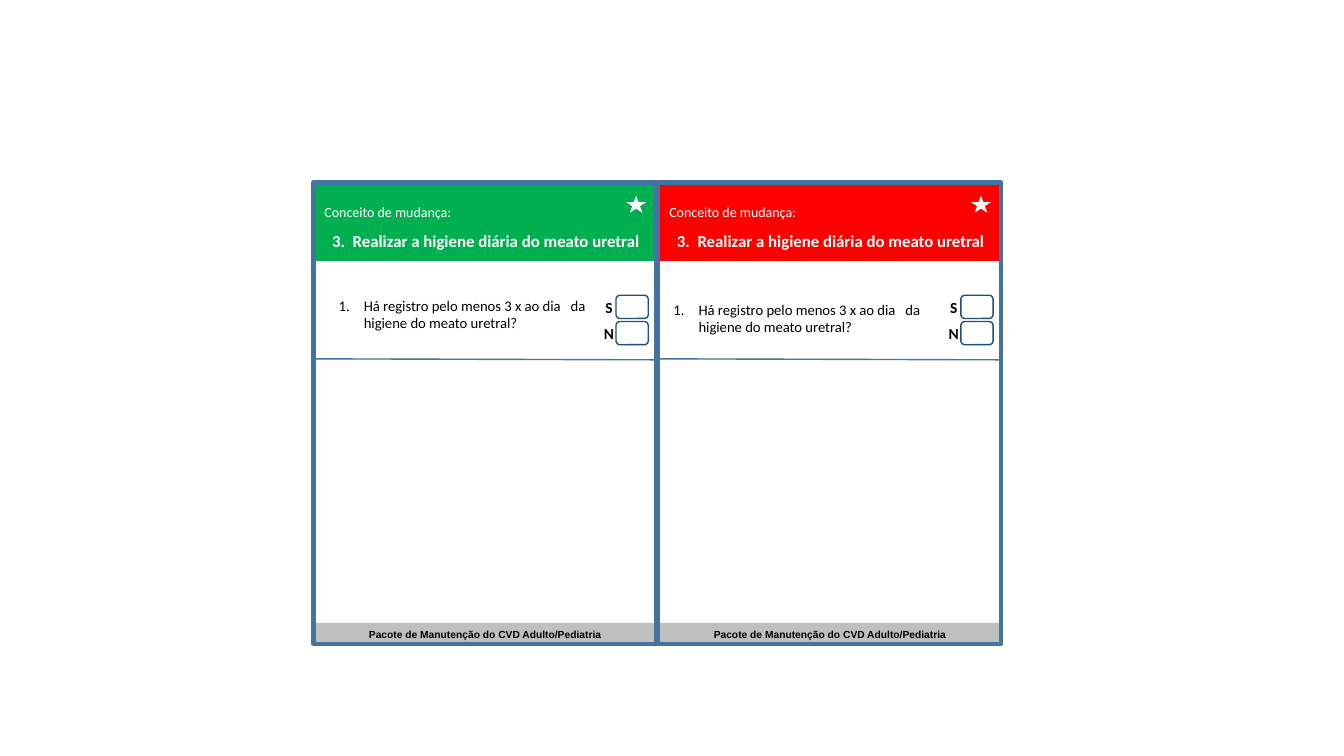
from dataclasses import dataclass

from lxml import etree
from pptx import Presentation
from pptx.dml.color import RGBColor
from pptx.enum.shapes import MSO_CONNECTOR, MSO_SHAPE
from pptx.enum.text import MSO_ANCHOR, PP_ALIGN
from pptx.oxml.ns import qn
from pptx.util import Emu, Pt

RECT, ROUNDED, STAR = MSO_SHAPE.RECTANGLE, MSO_SHAPE.ROUNDED_RECTANGLE, MSO_SHAPE.STAR_5_POINT
STRAIGHT = MSO_CONNECTOR.STRAIGHT
LEFT, CENTER = PP_ALIGN.LEFT, PP_ALIGN.CENTER
TOP, MIDDLE = MSO_ANCHOR.TOP, MSO_ANCHOR.MIDDLE
PX = 9144  # 100 px to the inch
BLANK_LAYOUT = 6


@dataclass(frozen=True)
class Theme:
    green: str = "00B050"
    red: str = "FF0000"
    frame: str = "43739E"
    checkbox: str = "1F4E79"
    footer: str = "BFBFBF"
    white: str = "FFFFFF"
    black: str = "000000"
    body_font: str = "Calibri"
    footer_font: str = "Arial"
    label_size: float = 10
    title_size: float = 12
    question_size: float = 10.5
    answer_size: float = 11
    footer_size: float = 7.3


THEME = Theme()
CARD_LEFT, CARD_TOP, CARD_WIDTH, CARD_HEIGHT, CARD_STEP = 311, 181, 340, 458, 342
# Header colour, then the question's offset from the card's left and its top
CARDS = [(THEME.green, 15, 286), (THEME.red, 5, 290)]
ANSWERS = [("S", 293, 296, 17), ("N", 319, 324, 14)]
LABEL = "Conceito de mudança:"
TITLE = "3.  Realizar a higiene diária do meato uretral"
QUESTION = "Há registro pelo menos 3 x ao dia   da  higiene do meato uretral?"
FOOTER = "Pacote de Manutenção do CVD Adulto/Pediatria"


def px(*lengths):
    return [Emu(length * PX) for length in lengths]


def set_line(line, color, width):
    line.color.rgb = RGBColor.from_string(color)
    line.width = Pt(width)


def add_box(page, kind, area, fill=None, line=None, width=1):
    box = page.shapes.add_shape(kind, *px(*area))
    box.shadow.inherit = False
    if fill:
        box.fill.solid()
        box.fill.fore_color.rgb = RGBColor.from_string(fill)
    else:
        box.fill.background()
    if line:
        set_line(box.line, line, width)
    else:
        box.line.fill.background()
    return box


def add_rule(page, start, end):
    rule = page.shapes.add_connector(STRAIGHT, *px(*start, *end))
    set_line(rule.line, THEME.frame, 1)
    etree.SubElement(rule._element.spPr, qn("a:effectLst"))


def set_frame(box, anchor=MIDDLE, **margins):
    frame = box.text_frame
    values = {"word_wrap": True, "vertical_anchor": anchor, **margins}
    for name, value in values.items():
        setattr(frame, name, value)
    return frame


def write(para, text, size, color, align=LEFT, bold=False, font=THEME.body_font, spacing=1):
    para.alignment = align
    para.line_spacing = spacing
    span = para.add_run()
    span.text = text
    span.font.color.rgb = RGBColor.from_string(color)
    values = {"size": Pt(size), "bold": bold, "name": font}
    for name, value in values.items():
        setattr(span.font, name, value)


def number(para, indent):
    """Give the paragraph an automatic number with a hanging indent in px."""
    properties = para._p.get_or_add_pPr()
    properties.set("marL", str(indent * PX))
    properties.set("indent", str(-indent * PX))
    bullet = etree.SubElement(properties, qn("a:buAutoNum"))
    bullet.set("type", "arabicPeriod")


def add_header(page, left, color):
    header = add_box(page, RECT, (left + 1, 183, CARD_WIDTH, 76), color)
    frame = set_frame(header)
    write(frame.paragraphs[0], LABEL, THEME.label_size, THEME.white, spacing=1.5)
    write(frame.add_paragraph(), TITLE, THEME.title_size, THEME.white, CENTER, True, spacing=1.5)


def add_footer(page, left):
    footer = add_box(page, RECT, (left, 618, CARD_WIDTH, 22), THEME.footer)
    para = set_frame(footer, TOP).paragraphs[0]
    write(para, FOOTER, THEME.footer_size, THEME.black, CENTER, True, THEME.footer_font)


def add_question(page, left, top):
    box = page.shapes.add_textbox(*px(left, top, 280, 51))
    para = set_frame(box).paragraphs[0]
    write(para, QUESTION, THEME.question_size, THEME.black)
    number(para, 25)


def add_answer(page, left, letter, box_top, letter_top, letter_height):
    add_box(page, ROUNDED, (left + 300, box_top, 32, 23), line=THEME.checkbox)
    box = page.shapes.add_textbox(*px(left + 281, letter_top, 24, letter_height))
    sides = ("left", "right", "top", "bottom")
    frame = set_frame(box, **{f"margin_{side}": 0 for side in sides})
    write(frame.paragraphs[0], letter, THEME.answer_size, THEME.black, CENTER, True)


def add_card(page, left, color, question_offset, question_top):
    add_footer(page, left)
    add_header(page, left, color)
    add_question(page, left + question_offset, question_top)
    for answer in ANSWERS:
        add_answer(page, left, *answer)
    add_box(page, RECT, (left, CARD_TOP, CARD_WIDTH, CARD_HEIGHT), line=THEME.frame, width=3)
    add_rule(page, (left + 1, 356), (left + CARD_WIDTH, 357))
    add_box(page, STAR, (left + 310, 194, 20, 17), THEME.white)


def main():
    deck = Presentation()
    deck.slide_width, deck.slide_height = px(1333, 750)
    page = deck.slides.add_slide(deck.slide_layouts[BLANK_LAYOUT])
    for index, card in enumerate(CARDS):
        add_card(page, CARD_LEFT + index * CARD_STEP, *card)
    deck.save("out.pptx")


if __name__ == "__main__":
    main()
